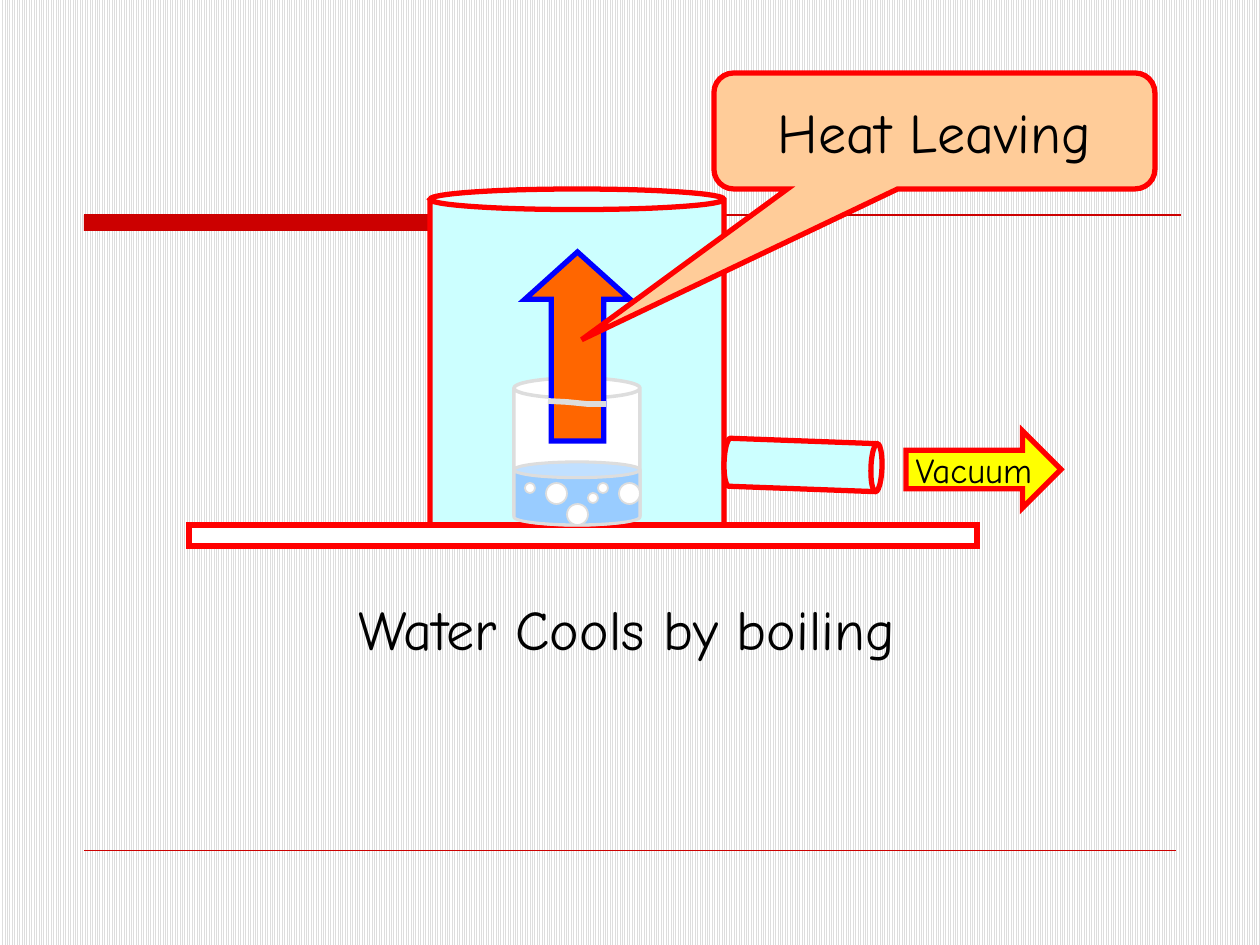
from dataclasses import dataclass

import lxml.etree
import pptx
import pptx.dml.color
import pptx.enum.dml
import pptx.enum.shapes
import pptx.enum.text
import pptx.oxml.ns
import pptx.util

RGBColor = pptx.dml.color.RGBColor
Shape = pptx.enum.shapes.MSO_SHAPE
Align = pptx.enum.text.PP_ALIGN
Anchor = pptx.enum.text.MSO_ANCHOR
qn = pptx.oxml.ns.qn

EMU_PER_PX = 914400 / 126
FONT = "Comic Neue"

BLACK = RGBColor(0x00, 0x00, 0x00)
WHITE = RGBColor(0xFF, 0xFF, 0xFF)
GREY = RGBColor(0xDD, 0xDD, 0xDD)
RED = RGBColor(0xFF, 0x00, 0x00)
DARK_RED = RGBColor(0xCC, 0x00, 0x00)
BLUE = RGBColor(0x00, 0x00, 0xFF)
PALE_CYAN = RGBColor(0xCC, 0xFF, 0xFF)
WATER_BLUE = RGBColor(0x99, 0xCC, 0xFF)
YELLOW = RGBColor(0xFF, 0xFF, 0x00)
ORANGE = RGBColor(0xFF, 0x66, 0x00)
PEACH = RGBColor(0xFF, 0xCC, 0x99)


@dataclass(frozen=True)
class Part:
    kind: Shape
    left: int
    top: int
    width: int
    height: int
    fill: RGBColor
    line: RGBColor
    weight: float = 3
    adjustments: tuple[float, ...] = ()
    rotation: float = 0
    text: str = ""
    text_size: int = 32
    wrap: bool = True


@dataclass(frozen=True)
class Bubble:
    left: int
    top: int
    size: int


VESSEL = [
    Part(Shape.CAN, 430, 189, 294, 357, PALE_CYAN, RED, adjustments=(0.07,)),
    Part(Shape.RECTANGLE, 189, 525, 788, 21, WHITE, RED),
    Part(Shape.CAN, 514, 378, 126, 147, WHITE, GREY, 2, (0.16,)),
    Part(Shape.CAN, 514, 462, 126, 63, WATER_BLUE, GREY, 1.75, (0.25,)),
    Part(Shape.CAN, 779, 386, 48, 158, PALE_CYAN, RED,
         adjustments=(0.23,), rotation=92.1),
]
BUBBLES = [
    Bubble(546, 483, 21), Bubble(567, 504, 21), Bubble(598, 483, 10),
    Bubble(525, 483, 10), Bubble(588, 493, 10), Bubble(619, 483, 21),
]
LABELS = [
    Part(Shape.RIGHT_ARROW, 906, 431, 155, 77, YELLOW, RED,
         adjustments=(0.5, 0.5), text="Vacuum", text_size=20, wrap=False),
    Part(Shape.UP_ARROW, 525, 252, 105, 189, ORANGE, BLUE,
         adjustments=(0.5, 0.45)),
    Part(Shape.ROUNDED_RECTANGULAR_CALLOUT, 714, 73, 441, 116, PEACH, RED,
         adjustments=(-0.8, 1.8, 0.17), text="Heat Leaving"),
]
GLASS_RIM = [(548, 401), (567, 402), (587, 404), (606, 404)]


def px(length: int) -> pptx.util.Emu:
    return pptx.util.Emu(round(length * EMU_PER_PX))


def write(shape, text: str, size: int, align: Align, wrap: bool = True) -> None:
    frame = shape.text_frame
    frame.word_wrap = wrap
    para = frame.paragraphs[0]
    para.text = text
    para.alignment = align
    para.font.name = FONT
    para.font.size = pptx.util.Pt(size)
    para.font.color.rgb = BLACK


def draw_part(slide, part: Part) -> None:
    shape = slide.shapes.add_shape(
        part.kind, px(part.left), px(part.top), px(part.width), px(part.height))
    shape.shadow.inherit = False
    shape.rotation = part.rotation
    for index, value in enumerate(part.adjustments):
        shape.adjustments[index] = value
    shape.fill.solid()
    shape.fill.fore_color.rgb = part.fill
    shape.line.color.rgb = part.line
    shape.line.width = pptx.util.Pt(part.weight)
    # Sharp corners
    outline = shape._element.spPr.find(qn("a:ln"))
    lxml.etree.SubElement(outline, qn("a:miter"), lim="800000")
    if part.text:
        shape.text_frame.vertical_anchor = Anchor.MIDDLE
        write(shape, part.text, part.text_size, Align.CENTER, part.wrap)


def draw_rule(slide, left: int, right: int, top: int, weight: float) -> None:
    rule = slide.shapes.add_connector(
        pptx.enum.shapes.MSO_CONNECTOR.STRAIGHT,
        px(left), px(top), px(right), px(top))
    rule.line.color.rgb = DARK_RED
    rule.line.width = pptx.util.Pt(weight)
    lxml.etree.SubElement(rule._element.spPr, qn("a:effectLst"))


def draw_curve(slide, points: list[tuple[int, int]]) -> None:
    builder = slide.shapes.build_freeform(*points[0], scale=EMU_PER_PX)
    builder.add_line_segments(points[1:], close=False)
    curve = builder.convert_to_shape()
    curve.shadow.inherit = False
    curve.fill.background()
    curve.line.color.rgb = GREY
    curve.line.width = pptx.util.Pt(3.25)


def main() -> None:
    deck = pptx.Presentation()
    deck.slide_width, deck.slide_height = px(1260), px(945)
    slide = deck.slides.add_slide(deck.slide_layouts[6])

    # Striped background
    background = slide.background.fill
    background.patterned()
    background.pattern = pptx.enum.dml.MSO_PATTERN.NARROW_VERTICAL
    background.fore_color.rgb = GREY
    background.back_color.rgb = WHITE

    # Header bar and rules
    bar = slide.shapes.add_shape(
        Shape.RECTANGLE, px(84), px(215), px(642), px(16))
    bar.shadow.inherit = False
    bar.fill.solid()
    bar.fill.fore_color.rgb = DARK_RED
    bar.line.fill.background()
    draw_rule(slide, 84, 1181, 215, 0.75)
    draw_rule(slide, 84, 1176, 850, 0.25)

    # Vacuum vessel, table, glass of water and pipe
    for part in VESSEL:
        draw_part(slide, part)
    for bubble in BUBBLES:
        draw_part(slide, Part(Shape.OVAL, bubble.left, bubble.top,
                              bubble.size, bubble.size, WHITE, GREY, 1))

    # Arrows and callout, with the glass rim in front
    for part in LABELS:
        draw_part(slide, part)
    draw_curve(slide, GLASS_RIM)

    # Caption
    caption = slide.shapes.add_textbox(px(346), px(588), px(651), px(79))
    write(caption, "Water Cools by boiling", 32, Align.LEFT)

    deck.save("out.pptx")


if __name__ == "__main__":
    main()
